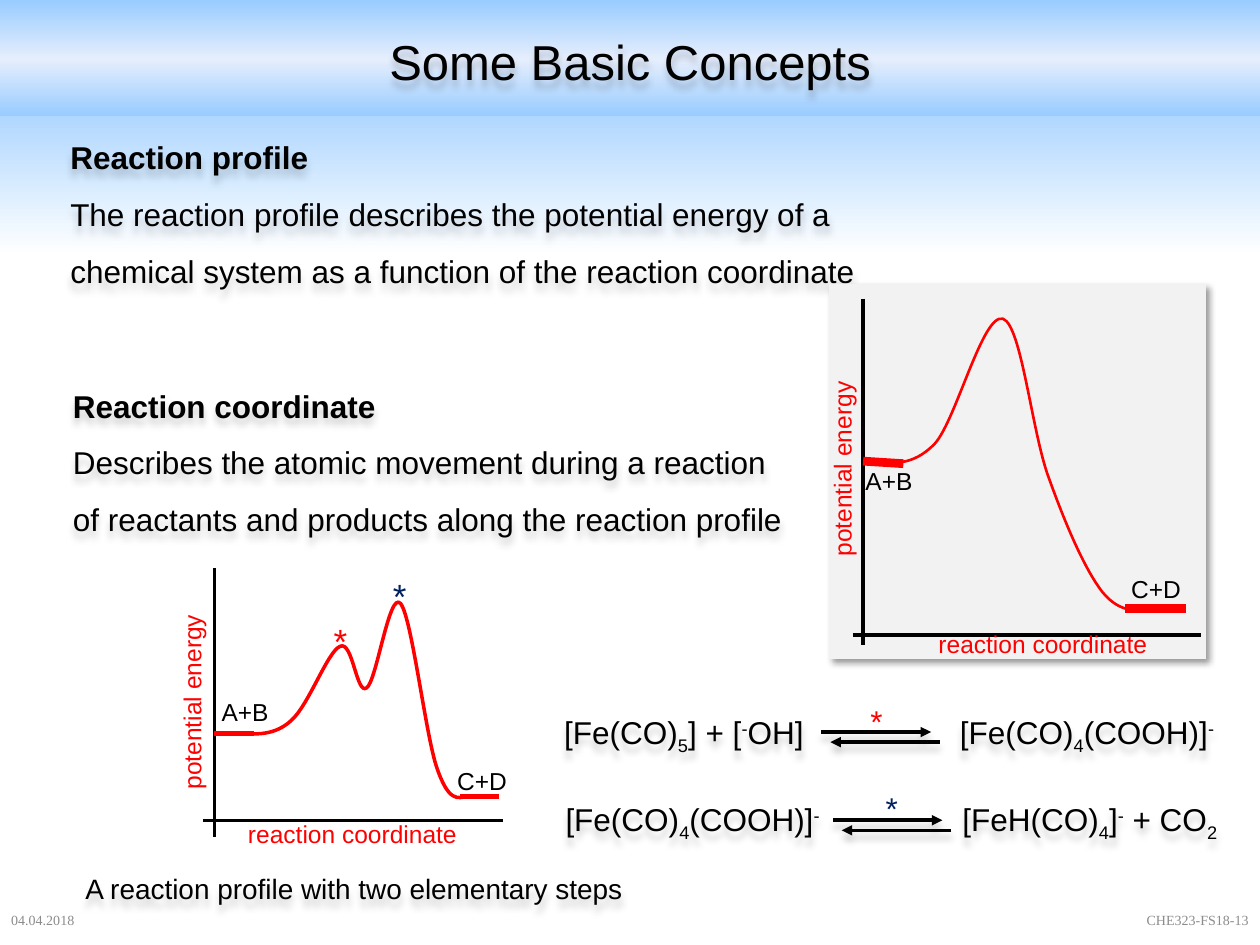
from copy import deepcopy
from lxml.etree import SubElement
from pptx import Presentation
from pptx.dml.color import RGBColor
from pptx.enum.shapes import MSO_CONNECTOR, MSO_SHAPE
from pptx.enum.text import MSO_ANCHOR, MSO_AUTO_SIZE, PP_ALIGN
from pptx.oxml.ns import qn
from pptx.util import Inches, Pt

BLACK = RGBColor(0, 0, 0)
RED = RGBColor(0xFF, 0, 0)
NAVY = RGBColor(0, 0x20, 0x60)
GRAY = RGBColor(0x8C, 0x8C, 0x8C)
PALE = RGBColor(0xF2, 0xF2, 0xF2)
SKY = RGBColor(0x99, 0xCC, 0xFF)
MIST = RGBColor(0xE5, 0xEE, 0xFD)
WHITE = RGBColor(0xFF, 0xFF, 0xFF)

# Shadows: opacity in percent, blur and distance in points, angle
SOFT = (20, 4, 4, 90)
CARD = (40, 4, 3, 45)

# Content
TITLE = "Some Basic Concepts"
NOTES = [
    ((0.46, 0.9, 6.5, 1.46), [
        "Reaction profile",
        "The reaction profile describes the potential energy of a",
        "chemical system as a function of the reaction coordinate"]),
    ((0.48, 2.87, 5.94, 1.46), [
        "Reaction coordinate",
        "Describes the atomic movement during a reaction",
        "of reactants and products along the reaction profile"]),
]
CAPTION = "A reaction profile with two elementary steps"
FOOTER = [(-0.01, "04.04.2018", PP_ALIGN.LEFT),
          (7.76, "CHE323-FS18-13", PP_ALIGN.RIGHT)]

# Energy diagrams: curve as a start point and Bezier segments
ONE = {
    "curve": [(6.89, 3.66),
              (7.06, 3.68, 7.24, 3.71, 7.42, 3.52),
              (7.59, 3.33, 7.8, 2.48, 7.96, 2.53),
              (8.11, 2.58, 8.19, 3.45, 8.33, 3.81),
              (8.46, 4.17, 8.61, 4.52, 8.75, 4.7),
              (8.89, 4.87, 9.03, 4.85, 9.17, 4.84)],
    "axes": [(6.85, 2.37, 6.85, 5.12), (6.77, 5.04, 9.53, 5.04)],
    "levels": [(6.85, 3.66, 7.17, 3.68), (8.93, 4.83, 9.41, 4.83)],
    "widths": (1.5, 2, 5),
    "labels": [(6.77, 3.65), (8.88, 4.51), (5.89, 3.55), (7.35, 4.94)],
}
TWO = {
    "curve": [(1.88, 5.82),
              (2.03, 5.83, 2.18, 5.84, 2.31, 5.72),
              (2.45, 5.6, 2.6, 5.17, 2.7, 5.13),
              (2.8, 5.08, 2.83, 5.52, 2.91, 5.46),
              (2.99, 5.41, 3.09, 4.68, 3.18, 4.79),
              (3.27, 4.9, 3.38, 5.85, 3.47, 6.1),
              (3.56, 6.36, 3.63, 6.34, 3.71, 6.32)],
    "axes": [(1.7, 4.51, 1.7, 6.64), (1.61, 6.51, 3.99, 6.51)],
    "levels": [(1.7, 5.82, 2.02, 5.82), (3.65, 6.32, 3.96, 6.32)],
    "widths": (2, 1.5, 3),
    "labels": [(1.66, 5.48), (3.53, 6.03), (0.73, 5.4), (1.87, 6.45)],
}
# Label text, width, colour, rotation
LABELS = [("A+B", 0.58, BLACK, 0), ("C+D", 0.6, BLACK, 0),
          ("potential energy", 1.59, RED, 270),
          ("reaction coordinate", 1.87, RED, 0)]

# Formulas: runs of text and baseline shift in percent
ACID = [("[Fe(CO)", 0), ("4", -25), ("(COOH)]", 0), ("-", 30)]
BASE = [("[Fe(CO)", 0), ("5", -25), ("] + [", 0), ("-", 30), ("OH]", 0)]
ENDS = [("[FeH(CO)", 0), ("4", -25), ("]", 0), ("-", 30),
        (" + CO", 0), ("2", -25)]
# Arrow start x, y; text top; left and right side as (x, width, runs)
STEPS = [(6.52, 5.81, 5.61, [(4.38, 2.14, BASE), (7.52, 2.33, ACID)]),
         (6.61, 6.51, 6.3, [(4.39, 2.33, ACID), (7.54, 2.32, ENDS)])]
# Left, top, width, height, size, colour
STARS = [(6.81, 5.52, 0.3, 0.4, 18, RED), (6.93, 6.21, 0.3, 0.4, 18, NAVY),
         (3.02, 4.51, 0.31, 0.44, 20, NAVY), (2.55, 4.87, 0.31, 0.44, 20, RED)]


def cast(shape, look=None):
    """Replace the theme shadow by the given one, or by none."""
    box = SubElement(shape._element.spPr, qn("a:effectLst"))
    if look:
        alpha, blur, dist, angle = look
        shade = SubElement(box, qn("a:outerShdw"), blurRad=str(Pt(blur)),
                           dist=str(Pt(dist)), dir=str(angle * 60000),
                           algn="tl", rotWithShape="0")
        color = SubElement(shade, qn("a:srgbClr"), val=str(BLACK))
        SubElement(color, qn("a:alpha"), val=str(alpha * 1000))


def blend(fill, root, stops):
    """Vertical gradient; root is the element that holds it."""
    fill.gradient()
    fill.gradient_angle = 270
    items = next(root.iter(qn("a:gsLst")))
    while len(items) < len(stops):
        items.append(deepcopy(items[0]))
    for stop, (pos, color) in zip(fill.gradient_stops, stops):
        stop.position = pos
        stop.color.rgb = color


def style(para, size, color=BLACK, face="Arial"):
    font = para.font
    font.size, font.name = Pt(size), face
    font.color.rgb = color


def write(shapes, area, lines, size, color=BLACK, face="Arial", wrap=False):
    """Text box; a line is a string or a list of (text, baseline) runs."""
    box = shapes.add_textbox(*map(Inches, area))
    frame = box.text_frame
    frame.word_wrap = wrap
    if not wrap:
        frame.auto_size = MSO_AUTO_SIZE.SHAPE_TO_FIT_TEXT
    for i, line in enumerate(lines):
        para = frame.add_paragraph() if i else frame.paragraphs[0]
        style(para, size, color, face)
        for text, shift in [(line, 0)] if isinstance(line, str) else line:
            run = para.add_run()
            run.text = text
            if shift:
                run._r.get_or_add_rPr().set("baseline", str(shift * 1000))
    return box


def rule(shapes, ends, color, width, arrow=False):
    line = shapes.add_connector(MSO_CONNECTOR.STRAIGHT, *map(Inches, ends))
    line.line.color.rgb = color
    line.line.width = Pt(width)
    if arrow:
        SubElement(line._element.spPr.find(qn("a:ln")), qn("a:tailEnd"),
                   type="triangle")
    cast(line, SOFT if arrow else None)


def trace(shapes, start, parts):
    """Freeform through the segment ends, each segment bent to a Bezier."""
    build = shapes.build_freeform(*map(Inches, start))
    build.add_line_segments([tuple(map(Inches, p[4:])) for p in parts],
                            close=False)
    curve = build.convert_to_shape()
    steps = list(curve._element.iter(qn("a:lnTo")))
    for step, part in zip(steps, parts):
        step.tag = qn("a:cubicBezTo")
        for i, (x, y) in enumerate((part[:2], part[2:4])):
            node = step.makeelement(qn("a:pt"), {
                "x": str(Inches(x) - curve.left),
                "y": str(Inches(y) - curve.top)})
            step.insert(i, node)
    return curve


def plot(shapes, data):
    thin, axis, thick = data["widths"]
    start, *parts = data["curve"]
    curve = trace(shapes, start, parts)
    curve.fill.background()
    curve.line.color.rgb = RED
    curve.line.width = Pt(thin)
    cast(curve)
    for ends in data["axes"]:
        rule(shapes, ends, BLACK, axis)
    for ends in data["levels"]:
        rule(shapes, ends, RED, thick)
    for (x, y), (text, width, color, turn) in zip(data["labels"], LABELS):
        write(shapes, (x, y, width, 0.34), [text], 14, color).rotation = turn


def main():
    deck = Presentation()
    deck.slide_width, deck.slide_height = Inches(10), Inches(7.5)
    slide = deck.slides.add_slide(deck.slide_layouts[5])
    shapes = slide.shapes
    blend(slide.background.fill, slide._element, [(0.08, SKY), (0.27, WHITE)])

    # Header band, behind the title
    band = shapes.add_shape(MSO_SHAPE.RECTANGLE, 0, 0, Inches(10), Inches(0.92))
    blend(band.fill, band._element, [(0, SKY), (0.51, MIST), (1, SKY)])
    band.line.fill.background()
    cast(band)
    shapes._spTree.insert(2, band._element)

    title = shapes.title
    title.left, title.top, title.width, title.height = map(
        Inches, (0.75, 0.29, 8.5, 0.39))
    title.text_frame.text = TITLE
    title.text_frame.vertical_anchor = MSO_ANCHOR.MIDDLE
    title.text_frame.auto_size = MSO_AUTO_SIZE.NONE
    head = title.text_frame.paragraphs[0]
    head.alignment = PP_ALIGN.CENTER
    style(head, 28)
    cast(title, SOFT)

    # Footer
    for x, text, side in FOOTER:
        box = write(shapes, (x, 7.1, 2.25, 0.4), [text], 8, GRAY,
                    "Times New Roman", True)
        box.text_frame.vertical_anchor = MSO_ANCHOR.MIDDLE
        box.text_frame.paragraphs[0].alignment = side

    # Definitions and caption
    for area, lines in NOTES:
        box = write(shapes, area, lines, 18)
        for para in box.text_frame.paragraphs:
            para.line_spacing = 1.5
        box.text_frame.paragraphs[0].font.bold = True
        cast(box, SOFT)
    cast(write(shapes, (0.58, 6.87, 4.52, 0.37), [CAPTION], 16), SOFT)

    # Diagrams
    group = shapes.add_group_shape().shapes
    card = group.add_shape(MSO_SHAPE.RECTANGLE,
                           *map(Inches, (6.58, 2.25, 2.99, 2.98)))
    card.fill.solid()
    card.fill.fore_color.rgb = PALE
    card.line.fill.background()
    cast(card, CARD)
    plot(group, ONE)
    plot(shapes, TWO)

    # Reaction steps
    for x, y, top, sides in STEPS:
        for left, width, runs in sides:
            cast(write(shapes, (left, top, width, 0.4), [runs], 18), SOFT)
        rule(shapes, (x, y, x + 0.87, y), BLACK, 2, True)
        rule(shapes, (x + 0.94, y + 0.08, x + 0.07, y + 0.08), BLACK, 2, True)
    for *area, size, color in STARS:
        write(shapes, area, ["*"], size, color)

    deck.save("out.pptx")


if __name__ == "__main__":
    main()
